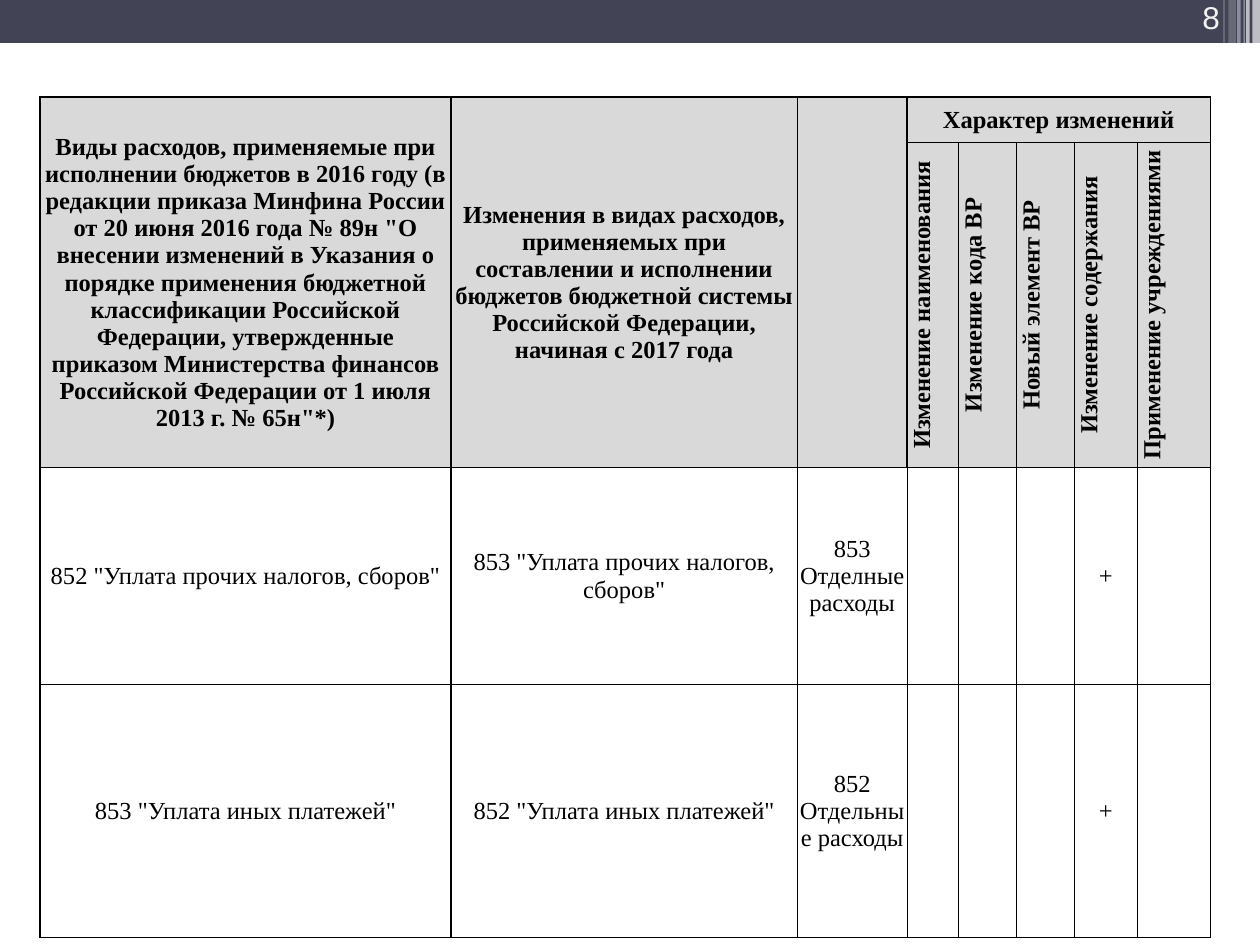
from dataclasses import dataclass

from lxml.etree import SubElement as Sub
from pptx import Presentation
from pptx.dml.color import RGBColor as RGB
from pptx.enum.shapes import MSO_SHAPE as Shape
from pptx.enum.text import MSO_ANCHOR as Anchor, PP_ALIGN as Align
from pptx.oxml.ns import qn
from pptx.util import Pt


@dataclass(frozen=True)
class Theme:
    bar: str = "424456"
    stripe: str = "FFFFFF"
    number: str = "F2F2F2"
    head: str = "D9D9D9"
    ink: str = "000000"
    serif: str = "Times New Roman"
    sans: str = "Arial"
    body_size: float = 14
    number_size: float = 18
    thick: float = 1
    thin: float = 0.5


T = Theme()

# Table content and grid, in points
COLS = [234.7, 198, 62.6, 29.5, 33.1, 33.1, 36, 41.8]
ROWS = [26, 175, 123.8, 144.7]
HEAD_ROWS = 2
MERGES = [(0, 0, 1, 0), (0, 1, 1, 1), (0, 3, 0, 7)]
CELLS = [
    ['Виды расходов, применяемые при исполнении бюджетов в 2016 году (в редакции приказа '
     'Минфина России от 20 июня 2016 года № 89н "О внесении изменений в Указания о порядке '
     'применения бюджетной классификации Российской Федерации, утвержденные приказом '
     'Министерства финансов Российской Федерации от 1 июля 2013 г. № 65н"*)',
     'Изменения в видах расходов, применяемых при составлении и исполнении бюджетов '
     'бюджетной системы Российской Федерации, начиная с 2017 года',
     '', 'Характер изменений', '', '', '', ''],
    ['', '', '', 'Изменение наименования', 'Изменение кода ВР', 'Новый элемент ВР',
     'Изменение содержания', 'Применение учреждениями'],
    ['852 "Уплата прочих налогов, сборов"', '853 "Уплата прочих налогов, сборов"',
     '853 Отделные расходы', '', '', '', '+', ''],
    ['853 "Уплата иных платежей"', '852 "Уплата иных платежей"',
     '852 Отдельные расходы', '', '', '', '+', ''],
]


def write(tf, text, size=T.body_size, font=T.serif, color=T.ink, bold=False,
          align=Align.CENTER):
    p = tf.paragraphs[0]
    p.alignment = align
    r = p.add_run()
    r.text = text
    f = r.font
    f.size, f.name, f.bold = Pt(size), font, bold
    f.color.rgb = RGB.from_string(color)


def column_edge(row, edge):
    """Width of a vertical rule: thick in the head, around the table and after column one."""
    if row == 1 and edge == 7:
        return T.thin
    return T.thick if row < HEAD_ROWS or edge in (0, 1, len(COLS)) else T.thin


def row_edge(col, edge):
    """Width of a horizontal rule; the blank head column has none between its rows."""
    if col == 2 and edge == 1:
        return 0
    return T.thick if edge <= HEAD_ROWS else T.thin


class Builder:
    def __init__(self, prs, theme):
        self.t = theme
        self.s = prs.slides.add_slide(prs.slide_layouts[6])

    def rect(self, x, y, w, h, color, alpha=None):
        sp = self.s.shapes.add_shape(Shape.RECTANGLE, Pt(x), Pt(y), Pt(w), Pt(h))
        sp.shadow.inherit = False
        sp.line.fill.background()
        sp.fill.solid()
        sp.fill.fore_color.rgb = RGB.from_string(color)
        if alpha:
            clr = sp.fill._xPr.find(".//" + qn("a:srgbClr"))
            Sub(clr, qn("a:alpha"), val=str(alpha * 1000))

    def text(self, x, y, w, h, text, anchor=Anchor.TOP, **fmt):
        tf = self.s.shapes.add_textbox(Pt(x), Pt(y), Pt(w), Pt(h)).text_frame
        tf.word_wrap = True
        tf.vertical_anchor = anchor
        write(tf, text, **fmt)

    def border(self, tcPr, side, width):
        ln = Sub(tcPr, qn("a:ln" + side), w=str(Pt(width)))
        if width:
            Sub(Sub(ln, qn("a:solidFill")), qn("a:srgbClr"), val=self.t.ink)
        else:
            Sub(ln, qn("a:noFill"))

    def cell(self, cell, row, col, text):
        head = row < HEAD_ROWS
        cell.margin_left = cell.margin_right = cell.margin_top = Pt(0.72)
        cell.margin_bottom = 0
        cell.vertical_anchor = Anchor.MIDDLE
        tcPr = cell._tc.get_or_add_tcPr()
        if row == 1 and text:
            tcPr.set("vert", "vert270")
        for side, width in (("L", column_edge(row, col)), ("R", column_edge(row, col + 1)),
                            ("T", row_edge(col, row)), ("B", row_edge(col, row + 1))):
            self.border(tcPr, side, width)
        if head:
            cell.fill.solid()
            cell.fill.fore_color.rgb = RGB.from_string(self.t.head)
        else:
            cell.fill.background()
        if text:
            write(cell.text_frame, text, bold=head)

    def table(self, x, y, cols, rows, cells, merges):
        tbl = self.s.shapes.add_table(len(rows), len(cols), Pt(x), Pt(y),
                                      Pt(sum(cols)), Pt(sum(rows))).table
        tbl.first_row = tbl.horz_banding = False
        for column, w in zip(tbl.columns, cols):
            column.width = Pt(w)
        for row, h in zip(tbl.rows, rows):
            row.height = Pt(h)
        for i, line in enumerate(cells):
            for j, text in enumerate(line):
                self.cell(tbl.cell(i, j), i, j, text)
        for top, left, bottom, right in merges:
            tbl.cell(top, left).merge(tbl.cell(bottom, right))


def main():
    prs = Presentation()
    prs.slide_width, prs.slide_height = Pt(720), Pt(540)
    b = Builder(prs, T)

    # Top bar with translucent stripes at its right end
    b.rect(0, 0, 720, 24.5, T.bar)
    for x, w, h, alpha in ((715.7, 4.3, 49, 65), (712.1, 2, 49, 65), (710.6, 0.7, 49, 60),
                           (707, 2, 49, 40), (702, 4.3, 46, 20), (699.1, 0.7, 46, 30)):
        b.rect(x, 0, w, h, T.stripe, alpha)

    # Slide number
    b.text(647.3, 0, 56.9, 23.8, "8", anchor=Anchor.BOTTOM, size=T.number_size,
           font=T.sans, color=T.number, align=Align.RIGHT)

    # Table of changes
    b.table(23, 55.4, COLS, ROWS, CELLS, MERGES)

    prs.save("out.pptx")


if __name__ == "__main__":
    main()
